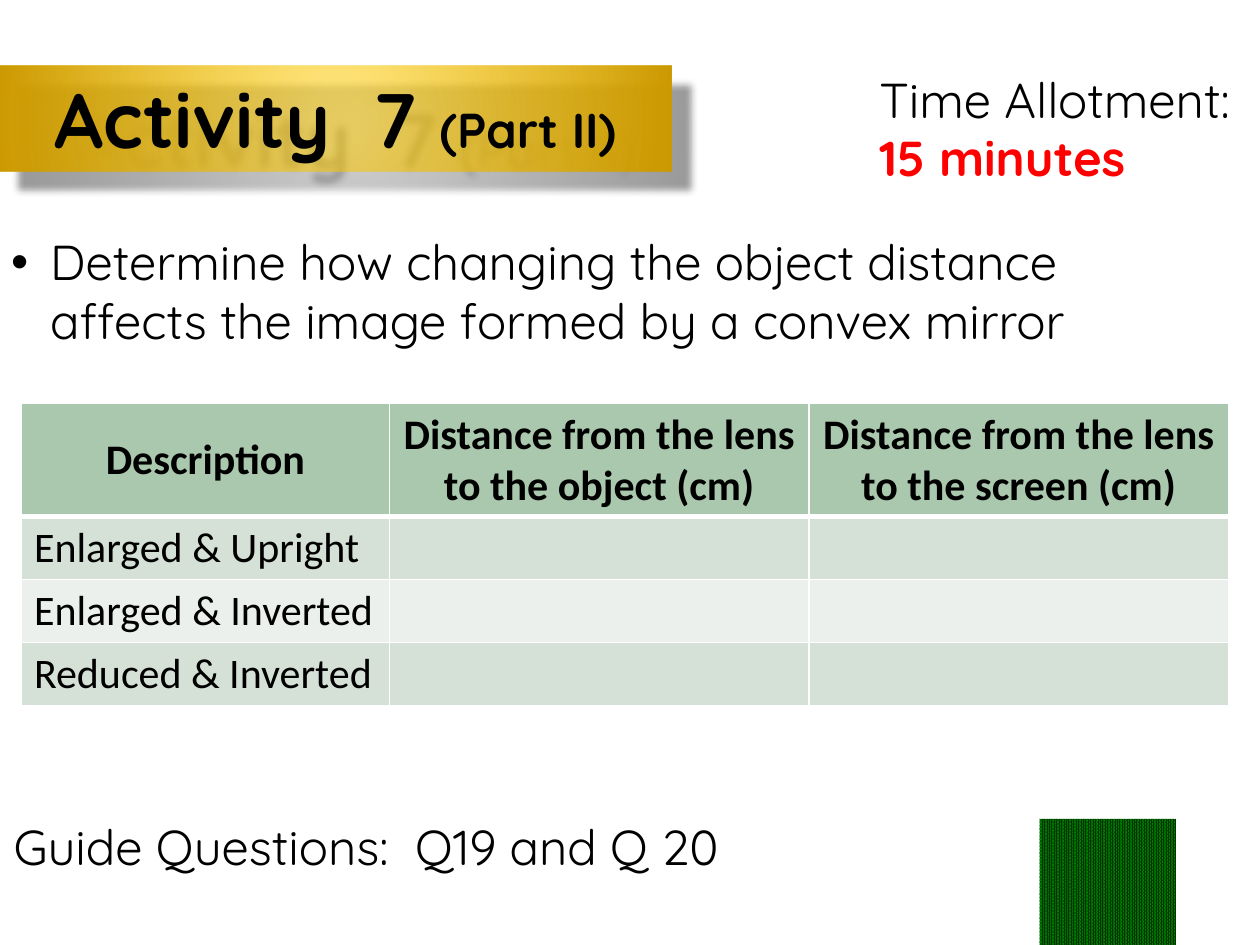
import lxml.etree
import pptx
import pptx.dml.color
import pptx.enum.dml
import pptx.enum.text
import pptx.oxml
import pptx.oxml.ns
import pptx.util

Inches = pptx.util.Inches
Pt = pptx.util.Pt
ALIGN = pptx.enum.text.PP_ALIGN
ANCHOR = pptx.enum.text.MSO_ANCHOR
NAMESPACE = pptx.oxml.ns.nsdecls("a")
HEADINGS = ["Description", "Distance from the lens to the object (cm)",
            "Distance from the lens to the screen (cm)"]
DESCRIPTIONS = ["Enlarged & Upright", "Enlarged & Inverted", "Reduced & Inverted"]


def color(value):
    """Return the colour for a hex string."""
    return pptx.dml.color.RGBColor.from_string(value)


def format_span(span, size, name="Quicksand", ink="000000", bold=False):
    """Set the font of one run."""
    span.font.size = Pt(size)
    span.font.name = name
    span.font.color.rgb = color(ink)
    span.font.bold = bold


def place(box, left, top, width, height):
    """Move and size a shape."""
    box.left, box.top = Inches(left), Inches(top)
    box.width, box.height = Inches(width), Inches(height)


def add_spans(para, spans):
    """Add runs given as pairs of text and font settings."""
    for text, settings in spans:
        span = para.add_run()
        span.text = text
        format_span(span, **settings)


def add_text(page, area, spans, bullet=False):
    """Add a wrapping text box, with a bullet if wanted."""
    box = page.shapes.add_textbox(*map(Inches, area))
    box.text_frame.word_wrap = True
    box.text_frame.auto_size = pptx.enum.text.MSO_AUTO_SIZE.SHAPE_TO_FIT_TEXT
    para = box.text_frame.paragraphs[0]
    if bullet:
        properties = para._p.get_or_add_pPr()
        properties.set("marL", str(Inches(0.31)))
        properties.set("indent", str(Inches(-0.31)))
        for mark in ('<a:buFont {} typeface="Arial"/>', '<a:buChar {} char="•"/>'):
            properties.append(pptx.oxml.parse_xml(mark.format(NAMESPACE)))
    add_spans(para, spans)


def add_banner(page):
    """Turn the title into a gold banner with a shadow."""
    banner = page.shapes.title
    place(banner, -0.01, 0.52, 5.34, 0.84)
    banner.text_frame.word_wrap = True
    banner.text_frame.auto_size = pptx.enum.text.MSO_AUTO_SIZE.SHAPE_TO_FIT_TEXT
    banner.text_frame.vertical_anchor = ANCHOR.TOP
    para = banner.text_frame.paragraphs[0]
    para.alignment = ALIGN.CENTER
    add_spans(para, [("Activity  7 ", {"size": 44, "bold": True}),
                     ("(Part II)", {"size": 28, "bold": True})])
    gradient = f"""<a:gradFill {NAMESPACE} rotWithShape="1"><a:gsLst>
        <a:gs pos="8000"><a:srgbClr val="FFCC00"><a:alpha val="52000"/></a:srgbClr></a:gs>
        <a:gs pos="100000"><a:srgbClr val="CC9900"/></a:gs></a:gsLst>
        <a:path path="circle"><a:fillToRect l="50000" t="50000" r="50000" b="50000"/></a:path>
        </a:gradFill>"""
    shadow = f"""<a:effectLst {NAMESPACE}><a:outerShdw blurRad="{Pt(4)}" dist="{Pt(15)}"
        dir="2700000" algn="tl" rotWithShape="0"><a:srgbClr val="000000">
        <a:alpha val="40000"/></a:srgbClr></a:outerShdw></a:effectLst>"""
    for markup in (gradient, shadow):
        banner._element.spPr.append(pptx.oxml.parse_xml(markup))


def add_pattern_square(page):
    """Add the green patterned square."""
    square = page.shapes.add_shape(
        pptx.enum.shapes.MSO_SHAPE.RECTANGLE, *map(Inches, (8.25, 6.5, 1.08, 1)))
    square.shadow.inherit = False
    square.fill.patterned()
    square.fill.pattern = pptx.enum.dml.MSO_PATTERN.PERCENT_90
    square.fill.fore_color.rgb = color("003300")
    square.fill.back_color.rgb = color("008000")
    square.line.fill.background()


def format_cell(cell, text, fill, header):
    """Set the text, borders and fill of one table cell."""
    for side in "LRTB":
        width = Pt(3 if header and side == "B" else 1)
        cell._tc.get_or_add_tcPr().append(pptx.oxml.parse_xml(
            f'<a:ln{side} {NAMESPACE} w="{width}"><a:solidFill>'
            f'<a:srgbClr val="FFFFFF"/></a:solidFill></a:ln{side}>'))
    cell.fill.solid()
    cell.fill.fore_color.rgb = color(fill)
    cell.text_frame.text = text
    para = cell.text_frame.paragraphs[0]
    if header:
        cell.vertical_anchor = ANCHOR.MIDDLE
        para.alignment = ALIGN.CENTER
    for span in para.runs:
        format_span(span, 24, "Calibri", bold=header)


def add_distance_table(page):
    """Add the table of image descriptions and distances."""
    rows = [HEADINGS] + [[text, "", ""] for text in DESCRIPTIONS]
    fills = ["AAC8AD", "D5E0D6", "EBF0EC", "D5E0D6"]
    table = page.shapes.add_table(
        len(rows), len(HEADINGS), *map(Inches, (0.17, 3.2, 9.58, 2.4))).table
    for column, width in zip(table.columns, (2.92, 3.33, 3.33)):
        column.width = Inches(width)
    for index, (texts, fill) in enumerate(zip(rows, fills)):
        table.rows[index].height = Inches(0.5 if index else 0.9)
        for cell, text in zip(table.rows[index].cells, texts):
            format_cell(cell, text, fill, index == 0)


def main():
    """Build and save the activity slide."""
    deck = pptx.Presentation()
    deck.slide_width, deck.slide_height = Inches(10), Inches(7.5)
    page = deck.slides.add_slide(deck.slide_layouts[5])
    add_banner(page)
    add_pattern_square(page)
    add_text(page, (-0.01, 1.79, 9.76, 1.04), [
        ("Determine how changing the object distance affects the image formed "
         "by a convex mirror", {"size": 28})], bullet=True)
    add_text(page, (6.88, 0.5, 3.12, 1.04), [
        ("Time Allotment:  ", {"size": 28}),
        ("15 minutes", {"size": 28, "ink": "FF0000", "bold": True})])
    add_distance_table(page)
    add_text(page, (0.01, 6.43, 6.33, 0.57), [
        ("Guide Questions:  Q19 and Q 20", {"size": 28})])
    deck.save("out.pptx")


if __name__ == "__main__":
    main()
